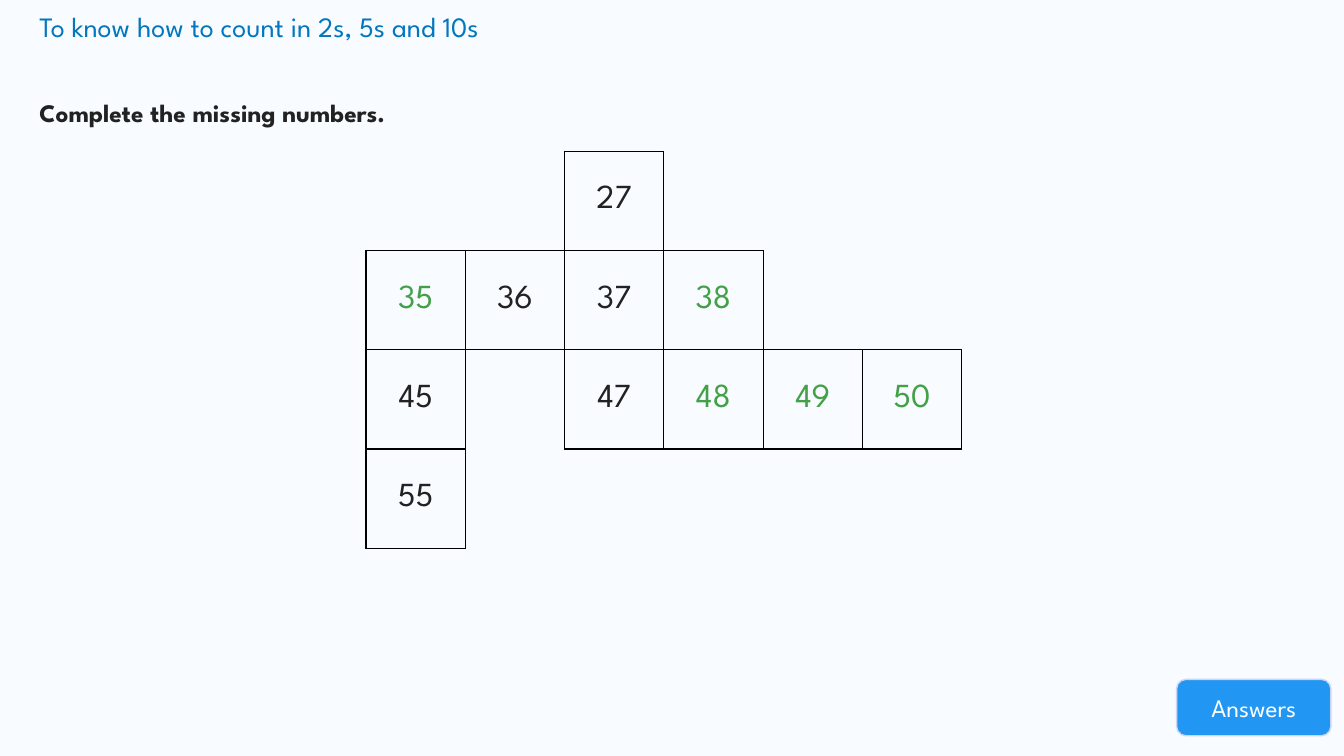
from pptx import Presentation
from pptx.dml.color import RGBColor
from pptx.enum.shapes import MSO_SHAPE
from pptx.enum.text import MSO_ANCHOR as Anchor, MSO_AUTO_SIZE as AutoSize, PP_ALIGN as Align
from pptx.oxml import parse_xml
from pptx.oxml.ns import nsdecls
from pptx.util import Inches, Pt

TITLE = "To know how to count in 2s, 5s and 10s"
TASK = "Complete the missing numbers."
BUTTON = "Answers"
GIVEN = [
    ["", "", "27", "", "", ""],
    ["", "36", "37", "", "", ""],
    ["45", "", "47", "", "", ""],
    ["55", "", "", "", "", ""],
]
ANSWERS = [
    ["35", "", "", "38", "", ""],
    ["", "", "", "48", "49", "50"],
]
ANSWER_ROW = 1
GRID_LEFT, GRID_TOP, CELL = 3.63, 1.5, 0.985

THEME = {
    "font": "League Spartan",
    "back": "F8FBFF", "title": "0277BD", "ink": "222222", "answer": "43A047",
    "button": "2196F3", "button_line": "CCD4F4", "white": "FFFFFF", "border": "000000",
    "title_size": 20, "text_size": 18, "number_size": 24,
}
SIDES = {"L": (0, -1), "R": (0, 1), "T": (-1, 0), "B": (1, 0)}


def rgb(name):
    return RGBColor.from_string(THEME[name])


def set_all(obj, values):
    for name, value in values.items():
        setattr(obj, name, value)


def place(sp, left, top, width, height):
    set_all(sp, {"left": Inches(left), "top": Inches(top),
                 "width": Inches(width), "height": Inches(height)})


def write(tf, text, size, color, bold=False, **layout):
    p = tf.paragraphs[0]
    set_all(p, layout)
    r = p.add_run()
    r.text = text
    set_all(r.font, {"name": THEME["font"], "size": Pt(THEME[size]), "bold": bold})
    r.font.color.rgb = rgb(color)


def add_border(cell, side, visible):
    paint = f'<a:solidFill><a:srgbClr val="{THEME["border"]}"/></a:solidFill>'
    cell._tc.get_or_add_tcPr().append(parse_xml(
        f'<a:ln{side} {nsdecls("a")} w="{Pt(1)}">'
        f'{paint if visible else "<a:noFill/>"}</a:ln{side}>'))


def add_grid(slide, rows, first_row, color, boxed):
    n_rows, n_cols = len(rows), len(rows[0])
    table = slide.shapes.add_table(
        n_rows, n_cols, Inches(GRID_LEFT), Inches(GRID_TOP + first_row * CELL),
        Inches(n_cols * CELL), Inches(n_rows * CELL)).table
    set_all(table, {"first_row": False, "horz_banding": False})
    for col in table.columns:
        col.width = Inches(CELL)
    for i, row in enumerate(rows):
        table.rows[i].height = Inches(CELL)
        for j, number in enumerate(row):
            cell = table.cell(i, j)
            for side, (di, dj) in SIDES.items():
                add_border(cell, side, (i, j) in boxed or (i + di, j + dj) in boxed)
            cell.fill.background()
            cell.vertical_anchor = Anchor.MIDDLE
            if number:
                write(cell.text_frame, number, "number_size", color, alignment=Align.CENTER)


def filled(rows, first_row=0):
    return {(i + first_row, j) for i, row in enumerate(rows)
            for j, number in enumerate(row) if number}


def main():
    prs = Presentation()
    set_all(prs, {"slide_width": Inches(13.33), "slide_height": Inches(7.5)})
    slide = prs.slides.add_slide(prs.slide_layouts[1])
    slide.background.fill.solid()
    slide.background.fill.fore_color.rgb = rgb("back")

    title, body = slide.placeholders
    place(title, 0.29, 0.04, 12.34, 0.44)
    place(body, 0.29, 0.77, 12.84, 0.56)
    for sp in (title, body):
        set_all(sp.text_frame, {"word_wrap": True, "auto_size": AutoSize.NONE,
                                "vertical_anchor": Anchor.TOP})
    write(title.text_frame, TITLE, "title_size", "title", alignment=Align.LEFT)
    pPr = body.text_frame.paragraphs[0]._p.get_or_add_pPr()
    set_all(pPr, {"marL": 0, "indent": 0})
    for name in ("marL", "indent"):
        pPr.set(name, "0")
    pPr.append(parse_xml(f'<a:buNone {nsdecls("a")}/>'))
    write(body.text_frame, TASK, "text_size", "ink", bold=True,
          alignment=Align.LEFT, line_spacing=1.5, space_before=Pt(0))

    button = slide.shapes.add_shape(
        MSO_SHAPE.ROUNDED_RECTANGLE, Inches(11.67), Inches(6.74), Inches(1.53), Inches(0.56))
    button.shadow.inherit = False
    button.fill.solid()
    button.fill.fore_color.rgb = rgb("button")
    button.line.color.rgb = rgb("button_line")
    button.line.width = Pt(1)
    button.text_frame.vertical_anchor = Anchor.MIDDLE
    write(button.text_frame, BUTTON, "text_size", "white", alignment=Align.CENTER)

    add_grid(slide, GIVEN, 0, "ink", filled(GIVEN) | filled(ANSWERS, ANSWER_ROW))
    add_grid(slide, ANSWERS, ANSWER_ROW, "answer", set())
    prs.save("out.pptx")


if __name__ == "__main__":
    main()
